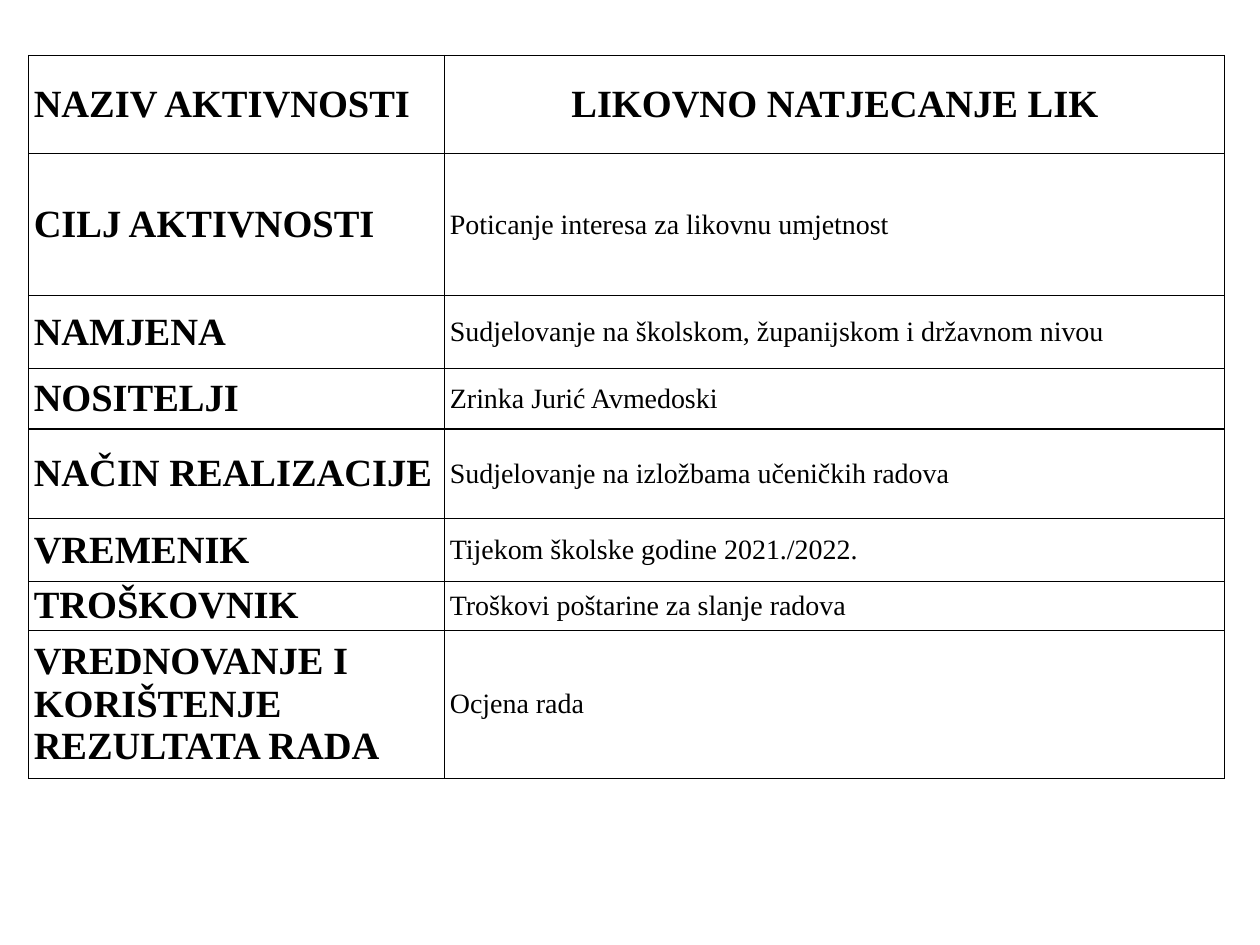
from lxml import etree
from pptx import Presentation
from pptx.dml.color import RGBColor
from pptx.enum.text import MSO_ANCHOR, PP_ALIGN
from pptx.oxml.ns import qn
from pptx.util import Pt

LEFT, CENTER = PP_ALIGN.LEFT, PP_ALIGN.CENTER
MIDDLE = MSO_ANCHOR.MIDDLE

ROWS = [
    ("NAZIV AKTIVNOSTI", "LIKOVNO NATJECANJE LIK", 56.2),
    ("CILJ AKTIVNOSTI", "Poticanje interesa za likovnu umjetnost", 81.2),
    ("NAMJENA", "Sudjelovanje na školskom, županijskom i državnom nivou", 41.8),
    ("NOSITELJI", "Zrinka Jurić Avmedoski", 34.4),
    ("NAČIN REALIZACIJE", "Sudjelovanje na izložbama učeničkih radova", 51.2),
    ("VREMENIK", "Tijekom školske godine 2021./2022.", 36),
    ("TROŠKOVNIK", "Troškovi poštarine za slanje radova", 28),
    ("VREDNOVANJE I KORIŠTENJE REZULTATA RADA", "Ocjena rada", 84.4),
]
COLUMN_WIDTHS = (237.8, 445.6)
TABLE_LEFT, TABLE_TOP = 16.4, 31.6
COLORS = {"ink": "000000", "paper": "FFFFFF"}
FONT = "Times New Roman"
HEADING_SIZE, BODY_SIZE = 22, 16
SIDE_MARGIN = 2.9
BORDER_WIDTH = 0.75


def add_borders(cell):
    properties = cell._tc.get_or_add_tcPr()
    for side in ("lnL", "lnR", "lnT", "lnB"):
        line = etree.SubElement(properties, qn(f"a:{side}"), w=str(Pt(BORDER_WIDTH)))
        fill = etree.SubElement(line, qn("a:solidFill"))
        etree.SubElement(fill, qn("a:srgbClr"), val=COLORS["ink"])


def format_cell(cell, text, is_heading, alignment):
    add_borders(cell)
    cell.fill.solid()
    cell.fill.fore_color.rgb = RGBColor.from_string(COLORS["paper"])
    cell.vertical_anchor = MIDDLE
    cell.margin_left = cell.margin_right = Pt(SIDE_MARGIN)
    cell.margin_top = cell.margin_bottom = 0
    cell.text = text
    paragraph = cell.text_frame.paragraphs[0]
    paragraph.alignment = alignment
    font = paragraph.font
    font.name = FONT
    font.size = Pt(HEADING_SIZE if is_heading else BODY_SIZE)
    font.bold = is_heading
    font.color.rgb = RGBColor.from_string(COLORS["ink"])


def main():
    presentation = Presentation()
    presentation.slide_width, presentation.slide_height = Pt(720), Pt(540)
    slide = presentation.slides.add_slide(presentation.slide_layouts[6])
    table_height = sum(height for _, _, height in ROWS)
    table = slide.shapes.add_table(
        len(ROWS), len(COLUMN_WIDTHS), Pt(TABLE_LEFT), Pt(TABLE_TOP),
        Pt(sum(COLUMN_WIDTHS)), Pt(table_height),
    ).table
    table.first_row = table.horz_banding = False
    for column, width in zip(table.columns, COLUMN_WIDTHS):
        column.width = Pt(width)
    for index, (label, value, height) in enumerate(ROWS):
        is_title_row = index == 0
        table.rows[index].height = Pt(height)
        format_cell(table.cell(index, 0), label, True, LEFT)
        format_cell(table.cell(index, 1), value, is_title_row, CENTER if is_title_row else LEFT)
    presentation.save("out.pptx")


if __name__ == "__main__":
    main()
